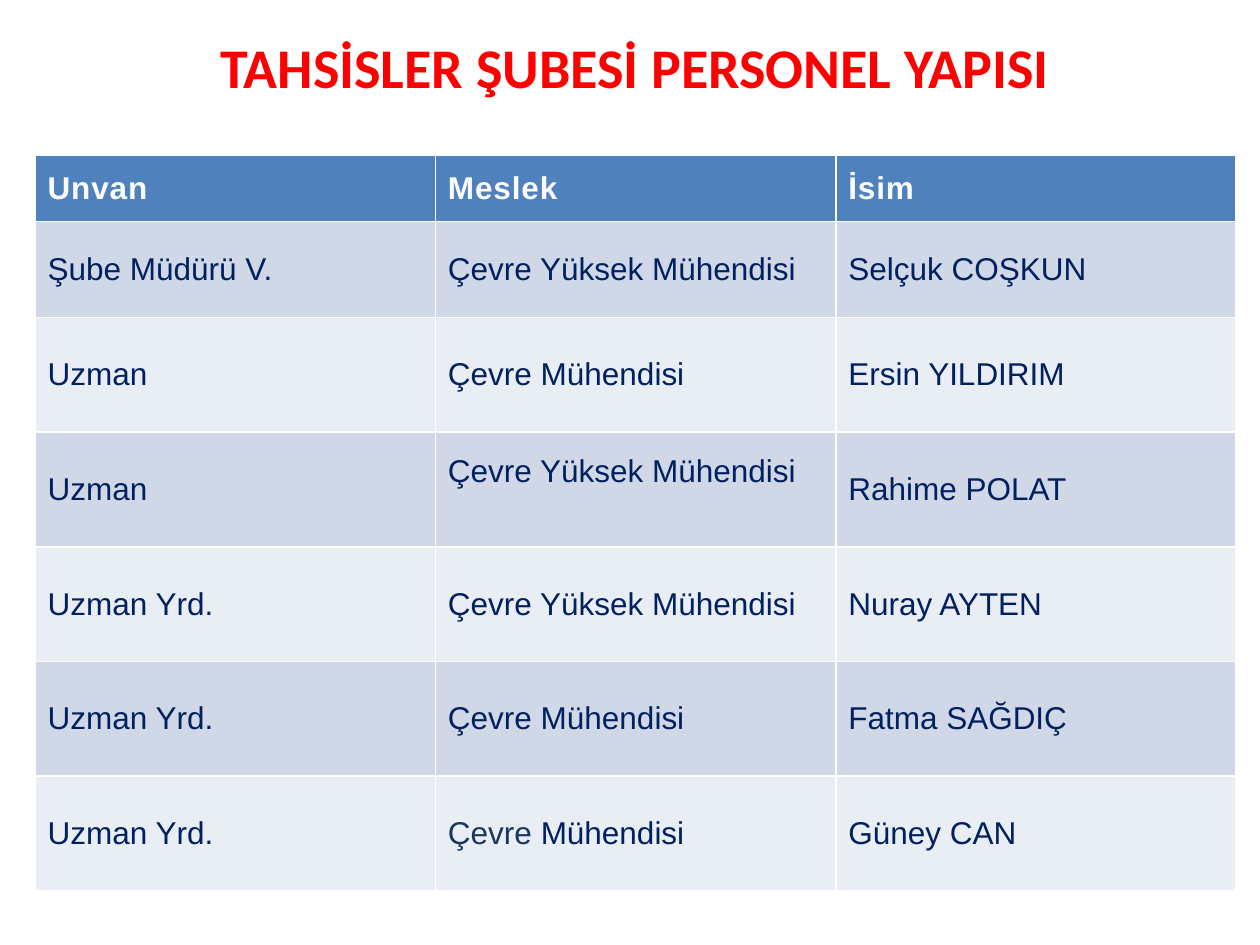
from lxml.etree import SubElement as Sub
from pptx import Presentation
from pptx.dml.color import RGBColor as Rgb
from pptx.enum.text import MSO_ANCHOR as Anchor, PP_ALIGN as Align
from pptx.oxml.ns import qn
from pptx.util import Pt

HUES = {"title": "FF0000", "head": "4F81BD", "light": "FCFCFD", "navy": "002060",
        "slate": "17375E", "odd": "D0D8E8", "even": "E9EDF4", "rule": "FFFFFF"}
ROWS = [
    ("Unvan", "Meslek", "İsim"),
    ("Şube Müdürü V.", "Çevre Yüksek Mühendisi", "Selçuk COŞKUN"),
    ("Uzman", "Çevre Mühendisi", "Ersin YILDIRIM"),
    ("Uzman", "Çevre Yüksek Mühendisi", "Rahime POLAT"),
    ("Uzman Yrd.", "Çevre Yüksek Mühendisi", "Nuray AYTEN"),
    ("Uzman Yrd.", "Çevre Mühendisi", "Fatma SAĞDIÇ"),
    ("Uzman Yrd.", ("Çevre ", "Mühendisi"), "Güney CAN"),
]
HIGHS = [38, 55] + [65.5] * 5


def style(para, name, size, hue, bold):
    """Set the font of a whole paragraph."""
    font = para.font
    font.name, font.size, font.bold = name, Pt(size), bold
    font.color.rgb = Rgb.from_string(HUES[hue])


def add_title(slide, left, top, width, height):
    """Add the centred heading in the given box."""
    frame = slide.shapes.add_textbox(Pt(left), Pt(top), Pt(width), Pt(height)).text_frame
    frame.word_wrap = True
    para = frame.paragraphs[0]
    para.text = "TAHSİSLER ŞUBESİ PERSONEL YAPISI"
    para.alignment = Align.CENTER
    style(para, "Calibri", 32, "title", True)


def add_rules(cell):
    """Draw thin lines on all four sides of a cell."""
    props = cell._tc.get_or_add_tcPr()
    for side in ("lnL", "lnR", "lnT", "lnB"):
        line = Sub(props, qn(f"a:{side}"), w=str(Pt(1)))
        Sub(Sub(line, qn("a:solidFill")), qn("a:srgbClr"), val=HUES["rule"])


def fill_cell(cell, text, row):
    """Write and colour one cell."""
    add_rules(cell)
    cell.vertical_anchor = Anchor.MIDDLE
    cell.fill.solid()
    hue = "head" if row == 0 else "odd" if row % 2 else "even"
    cell.fill.fore_color.rgb = Rgb.from_string(HUES[hue])
    para = cell.text_frame.paragraphs[0]
    parts = (text,) if isinstance(text, str) else text
    for part in parts:
        para.add_run().text = part
    style(para, "Arial", 18, "navy" if row else "light", row == 0)
    if row == 0:
        para._p.pPr.find(qn("a:defRPr")).set("spc", "50")
    if len(parts) > 1:
        para.runs[0].font.color.rgb = Rgb.from_string(HUES["slate"])


def add_staff(slide, left, top, width):
    """Add the staff table with equal columns."""
    cols = len(ROWS[0])
    table = slide.shapes.add_table(len(ROWS), cols, Pt(left), Pt(top),
                                   Pt(width), Pt(sum(HIGHS))).table
    for col in table.columns:
        col.width = Pt(width / cols)
    for row, (texts, high) in enumerate(zip(ROWS, HIGHS)):
        table.rows[row].height = Pt(high)
        for col, text in enumerate(texts):
            fill_cell(table.cell(row, col), text, row)
    table.cell(3, 1).margin_bottom = Pt(24)


def main():
    """Build and save the slide."""
    deck = Presentation()
    deck.slide_width, deck.slide_height = Pt(720), Pt(540)
    slide = deck.slides.add_slide(deck.slide_layouts[6])
    add_title(slide, 88, 15, 550, 85)
    add_staff(slide, 20, 88.5, 686.4)
    deck.save("out.pptx")


if __name__ == "__main__":
    main()
